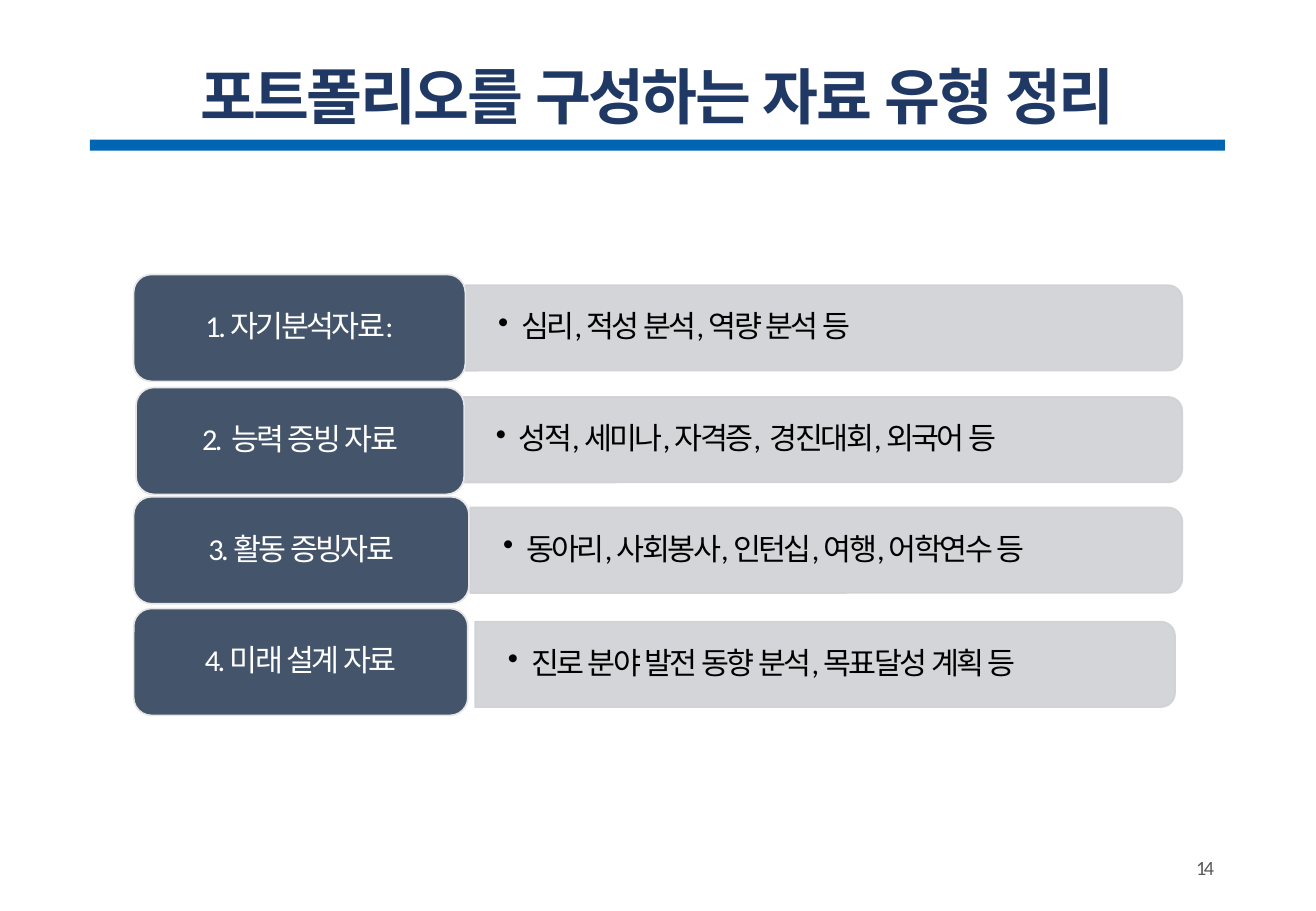
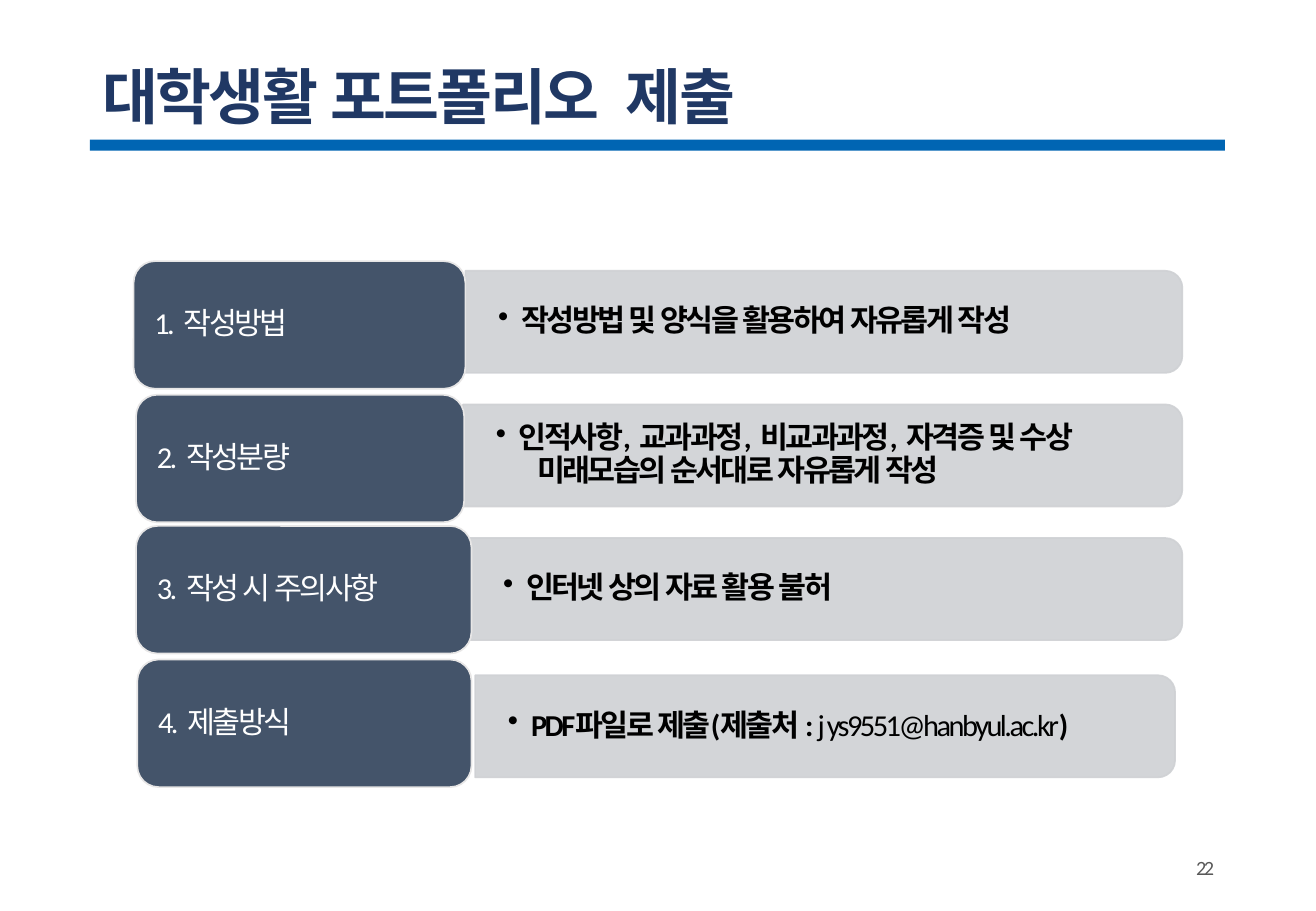
"""Builds two portfolio slides with labelled rows."""
from lxml.etree import SubElement
from pptx import Presentation
from pptx.dml.color import RGBColor
from pptx.enum.lang import MSO_LANGUAGE_ID
from pptx.enum.shapes import MSO_SHAPE
from pptx.enum.text import MSO_ANCHOR, MSO_AUTO_SIZE, PP_ALIGN
from pptx.oxml.ns import qn
from pptx.util import Inches, Pt

NAVY = RGBColor(0x20, 0x38, 0x64)
BLUE = RGBColor(0x00, 0x65, 0xB3)
SLATE = RGBColor(0x44, 0x54, 0x6A)
GREY = RGBColor(0xCF, 0xD1, 0xD4)
PALE = RGBColor(0xE7, 0xE6, 0xE6)
DIM = RGBColor(0x59, 0x59, 0x59)
WHITE = RGBColor(0xFF, 0xFF, 0xFF)
BLACK = RGBColor(0x00, 0x00, 0x00)
LEFT, MID, RIGHT = PP_ALIGN.LEFT, PP_ALIGN.CENTER, PP_ALIGN.RIGHT
MIDDLE, FIXED = MSO_ANCHOR.MIDDLE, MSO_AUTO_SIZE.NONE
KOREAN = MSO_LANGUAGE_ID.KOREAN
RECT = MSO_SHAPE.RECTANGLE
ROUND = MSO_SHAPE.ROUNDED_RECTANGLE
TAB = MSO_SHAPE.ROUND_2_SAME_RECTANGLE

BARS = [(3.83, 5.9), (3.81, 5.92), (3.87, 5.86), (3.91, 5.76)]
TAGS = [2.73, 2.7, 2.76, 2.75]

TYPES = dict(
    title="포트폴리오를 구성하는 자료 유형 정리", align=MID, page="14", tall=0.88,
    rows=[
        (1.1, 2.26, 2.7, "1. 자기분석자료:", [[("심리, 적성 분석, 역량 분석 등", False)]]),
        (1.12, 3.19, 3.62, "2.  능력 증빙 자료",
         [[("성적, 세미나, 자격증,  경진대회, 외국어 등", False)]]),
        (1.1, 4.09, 4.53, "3. 활동 증빙자료",
         [[("동아리, 사회봉사, 인턴십, 여행, 어학연수 등", False)]]),
        (1.1, 5.01, 5.47, "4. 미래 설계 자료",
         [[("진로 분야 발전 동향 분석, 목표달성 계획 등", False)]]),
    ])
SUBMIT = dict(
    title="대학생활 포트폴리오  제출", align=LEFT, page="22", tall=1.05,
    rows=[
        (1.1, 2.15, 2.65, "1.  작성방법", [[("작성방법 및 양식을 활용하여 자유롭게 작성", True)]]),
        (1.12, 3.25, 3.75, "2.  작성분량",
         [[("인적사항,  교과과정,  비교과과정,  자격증 및 수상", True)],
          [("미래모습의 순서대로 자유롭게 작성", True)]]),
        (1.12, 4.33, 4.85, "3.  작성 시 주의사항", [[("인터넷 상의 자료 활용 불허", True)]]),
        (1.13, 5.43, 5.98, "4.  제출방식",
         [[("PDF파일로 제출(제출처 : ", True), ("j ys9551@hanbyul.ac.kr", False), (")", True)]]),
    ])


class Deck:
    """Holds the style and the current slide."""

    def __init__(self):
        """Start an empty deck."""
        self.show = Presentation()
        self.show.slide_width, self.show.slide_height = Inches(10.83), Inches(7.5)
        self.slide = None

    def start(self, title, align, page):
        """Add a slide with its title, rule and page number."""
        self.slide = self.show.slides.add_slide(self.show.slide_layouts[5])
        self.shape(RECT, 0.74, 1.15, 9.34, 0.09, BLUE)
        head = self.slide.shapes.title
        head.left, head.top = Inches(0.74), Inches(0.4)
        head.width, head.height = Inches(9.34), Inches(0.84)
        self.frame(head, 0.1, 0.05)
        self.line(head, [(title, True)], 36, NAVY, align, "Arial")
        foot = self.box(7.65, 6.95, 2.44, 0.4, 0.1, 0.05)
        self.line(foot, [(page, False)], 12, DIM, RIGHT)

    def shape(self, kind, x, y, w, h, fill, edge=None):
        """Draw a flat preset shape."""
        form = self.slide.shapes.add_shape(kind, Inches(x), Inches(y), Inches(w), Inches(h))
        form.shadow.inherit = False
        form.fill.solid()
        form.fill.fore_color.rgb = fill
        if edge is None:
            form.line.fill.background()
        else:
            form.line.color.rgb = edge
            form.line.width = Pt(1)
        return form

    def frame(self, form, side, edge):
        """Set wrapping, anchor and insets."""
        text = form.text_frame
        text.word_wrap, text.auto_size = True, FIXED
        text.vertical_anchor = MIDDLE
        text.margin_left = text.margin_right = Inches(side)
        text.margin_top = text.margin_bottom = Inches(edge)

    def box(self, x, y, w, h, side, edge):
        """Add a text box."""
        form = self.slide.shapes.add_textbox(Inches(x), Inches(y), Inches(w), Inches(h))
        self.frame(form, side, edge)
        return form

    def line(self, form, runs, size, color, align, font="Calibri", more=False):
        """Add one paragraph run by run."""
        text = form.text_frame
        para = text.add_paragraph() if more else text.paragraphs[0]
        para.alignment, para.line_spacing = align, 0.9
        for words, bold in runs:
            run = para.add_run()
            run.text = words
            face = run.font
            face.name, face.size, face.bold = font, Pt(size), bold
            face.color.rgb, face.language_id = color, KOREAN
            run._r.get_or_add_rPr().set("spc", "-150")
        return para

    def bar(self, x, mid, w, h, lines):
        """Draw a grey bar with a bulleted list."""
        form = self.shape(TAB, x + (w - h) / 2, mid - w / 2, h, w, GREY, GREY)
        form.rotation = 90
        for tint in list(form._element.spPr.iter(qn("a:srgbClr"))):
            SubElement(tint, qn("a:alpha"), val="90000")
        deep = 0.9 * h
        form = self.box(x, mid - deep / 2, w - 0.04, deep, 0.27, 0.14)
        for i, runs in enumerate(lines):
            para = self.line(form, runs, 18, BLACK, LEFT, more=i > 0)
            props = para._p.get_or_add_pPr()
            props.set("marL", str(Inches(0.34 if i else 0.19)))
            props.set("indent", str(Inches(0 if i else -0.19)))
            if i == 0:
                SubElement(props, qn("a:buChar"), char="•")

    def tag(self, x, y, w, h, words, align):
        """Draw a dark label."""
        form = self.shape(ROUND, x, y, w, h, SLATE, PALE)
        self.frame(form, 0.12, 0.08)
        self.line(form, [(words, False)], 18, WHITE, align)

    def page(self, title, align, page, tall, rows):
        """Build a whole slide of labelled rows."""
        self.start(title, align, page)
        for (x, w), wide, (left, top, mid, name, lines) in zip(BARS, TAGS, rows):
            self.bar(x, mid, w, 0.8 * tall, lines)
            self.tag(left, top, wide, tall, name, align)


def main():
    """Build and save the deck."""
    deck = Deck()
    for data in (TYPES, SUBMIT):
        deck.page(**data)
    deck.show.save("out.pptx")


if __name__ == "__main__":
    main()
